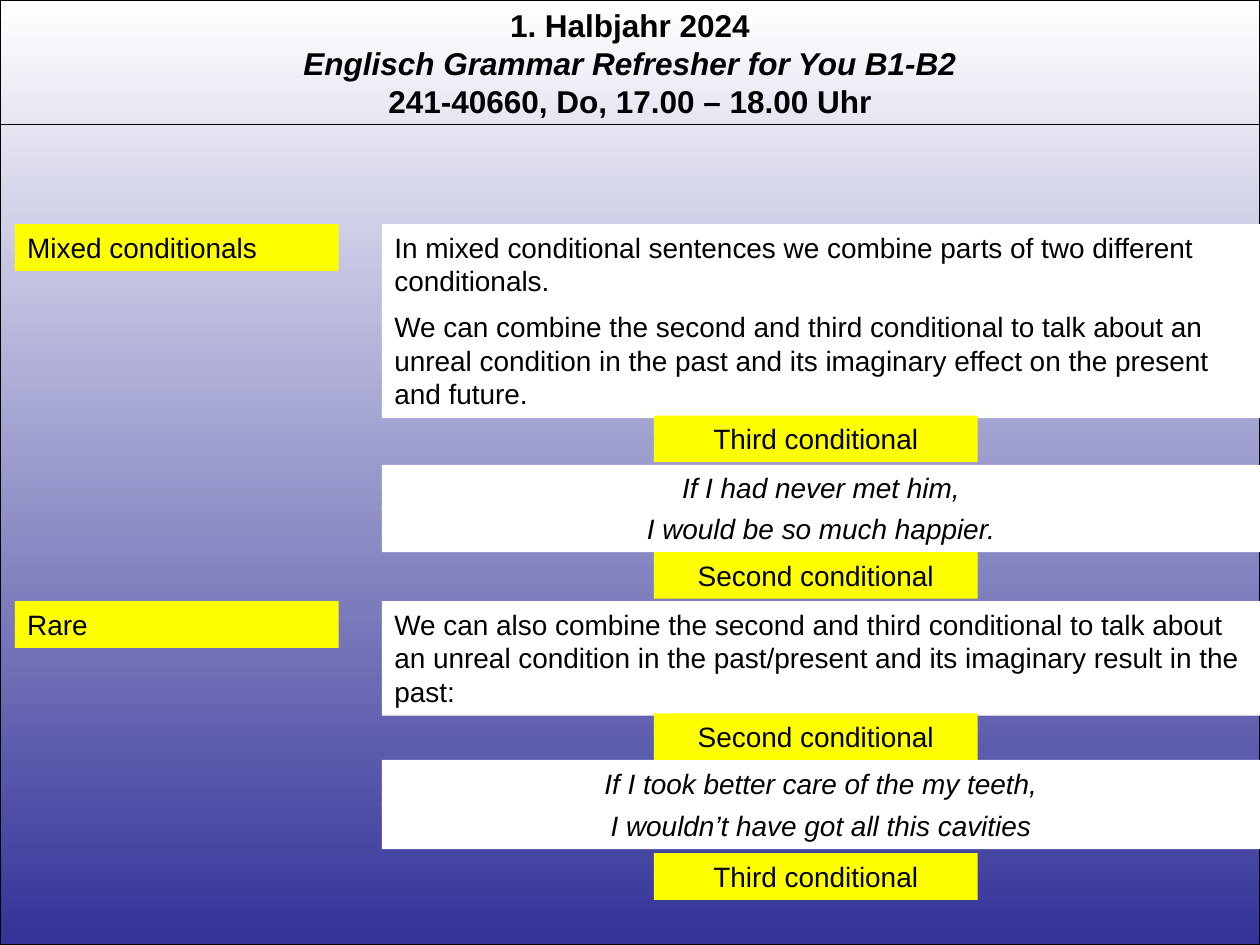
from lxml import etree
from pptx import Presentation
from pptx import util as u
from pptx.dml.color import RGBColor
from pptx.enum import shapes, text
from pptx.oxml.ns import qn

WIDTH, HEIGHT = 25.4, 19.05
BLACK, WHITE, YELLOW, BLUE = "000000", "FFFFFF", "FFFF00", "333399"
ROW = 0.94  # height of a box with one line
LABEL_WIDTH = 6.53
LABEL_LEFT, TAG_LEFT, BODY_LEFT = 0.3, 13.18, 7.7
BODY_WIDTH = WIDTH - BODY_LEFT

# Left labels: top, wording
LABELS = [(4.52, "Mixed conditionals"), (12.12, "Rare")]

# Explanations: top, height, wording
RULES = [
    (6.12, 2.31, "We can combine the second and third conditional to talk about an "
                 "unreal condition in the past and its imaginary effect on the "
                 "present and future."),
    (12.12, 2.31, "We can also combine the second and third conditional to talk about "
                  "an unreal condition in the past/present and its imaginary result "
                  "in the past:"),
    (4.52, 1.63, "In mixed conditional sentences we combine parts of two different "
                 "conditionals."),
]

# Example clauses: top, wording
EXAMPLES = [
    (16.18, "I wouldn’t have got all this cavities"),
    (9.37, "If I had never met him,"),
    (15.32, "If I took better care of the my teeth,"),
    (10.19, "I would be so much happier."),
]

# Names of the conditionals around the examples: top, wording
TAGS = [
    (8.38, "Third conditional"),
    (11.13, "Second conditional"),
    (14.38, "Second conditional"),
    (17.2, "Third conditional"),
]


def color(value):
    return RGBColor.from_string(value)


def write(paragraph, wording, size=16, bold=False, italic=False, centered=False):
    paragraph.alignment = text.PP_ALIGN.CENTER if centered else text.PP_ALIGN.LEFT
    run = paragraph.add_run()
    run.text = wording
    font = run.font
    font.name, font.size = "Arial", u.Pt(size)
    font.bold, font.italic = bold, italic
    font.color.rgb = color(BLACK)


def add_rectangle(slide, left, top, width, height):
    shape = slide.shapes.add_shape(
        shapes.MSO_SHAPE.RECTANGLE, u.Cm(left), u.Cm(top), u.Cm(width), u.Cm(height))
    shape.shadow.inherit = False
    return shape


def add_box(slide, left, top, width, height, fill, wording, **text_format):
    shape = add_rectangle(slide, left, top, width, height)
    shape.fill.solid()
    shape.fill.fore_color.rgb = color(fill)
    shape.line.fill.background()
    frame = shape.text_frame
    frame.word_wrap = True
    frame.vertical_anchor = text.MSO_ANCHOR.TOP
    write(frame.paragraphs[0], wording, **text_format)


def add_backdrop(slide):
    shape = add_rectangle(slide, 0, 0, WIDTH, HEIGHT)
    shape.fill.gradient()
    shape.fill.gradient_angle = 270  # top to bottom
    for stop, value in zip(shape.fill.gradient_stops, (WHITE, BLUE)):
        stop.color.rgb = color(value)
    shape.line.color.rgb = color(BLACK)
    shape.line.width = u.Pt(0.75)


def add_header(slide):
    box = slide.shapes.add_textbox(0, 0, u.Cm(WIDTH), u.Cm(2.57))
    frame = box.text_frame
    frame.word_wrap = True
    lines = [
        ("1. Halbjahr 2024", False),
        ("Englisch Grammar Refresher for You B1-B2", True),
        ("241-40660, Do, 17.00 – 18.00 Uhr", False),
    ]
    for index, (wording, italic) in enumerate(lines):
        paragraph = frame.add_paragraph() if index else frame.paragraphs[0]
        write(paragraph, wording, size=18, bold=True, italic=italic, centered=True)


def add_rule_line(slide, y):
    line = slide.shapes.add_connector(
        shapes.MSO_CONNECTOR.STRAIGHT, 0, u.Cm(y), u.Cm(WIDTH), u.Cm(y))
    line.line.color.rgb = color(BLACK)
    line.line.width = u.Pt(0.75)
    etree.SubElement(line._element.spPr, qn("a:effectLst"))


def main():
    presentation = Presentation()
    presentation.slide_width, presentation.slide_height = u.Cm(WIDTH), u.Cm(HEIGHT)
    slide = presentation.slides.add_slide(presentation.slide_layouts[6])

    # Background and course header
    add_backdrop(slide)
    add_header(slide)
    add_rule_line(slide, 2.51)

    # White explanations and examples
    for top, height, wording in RULES:
        add_box(slide, BODY_LEFT, top, BODY_WIDTH, height, WHITE, wording)
    for top, wording in EXAMPLES:
        add_box(slide, BODY_LEFT, top, BODY_WIDTH, ROW, WHITE, wording,
                italic=True, centered=True)

    # Yellow labels and tags
    for top, wording in LABELS:
        add_box(slide, LABEL_LEFT, top, LABEL_WIDTH, ROW, YELLOW, wording)
    for top, wording in TAGS:
        add_box(slide, TAG_LEFT, top, LABEL_WIDTH, ROW, YELLOW, wording, centered=True)

    presentation.save("out.pptx")


if __name__ == "__main__":
    main()
